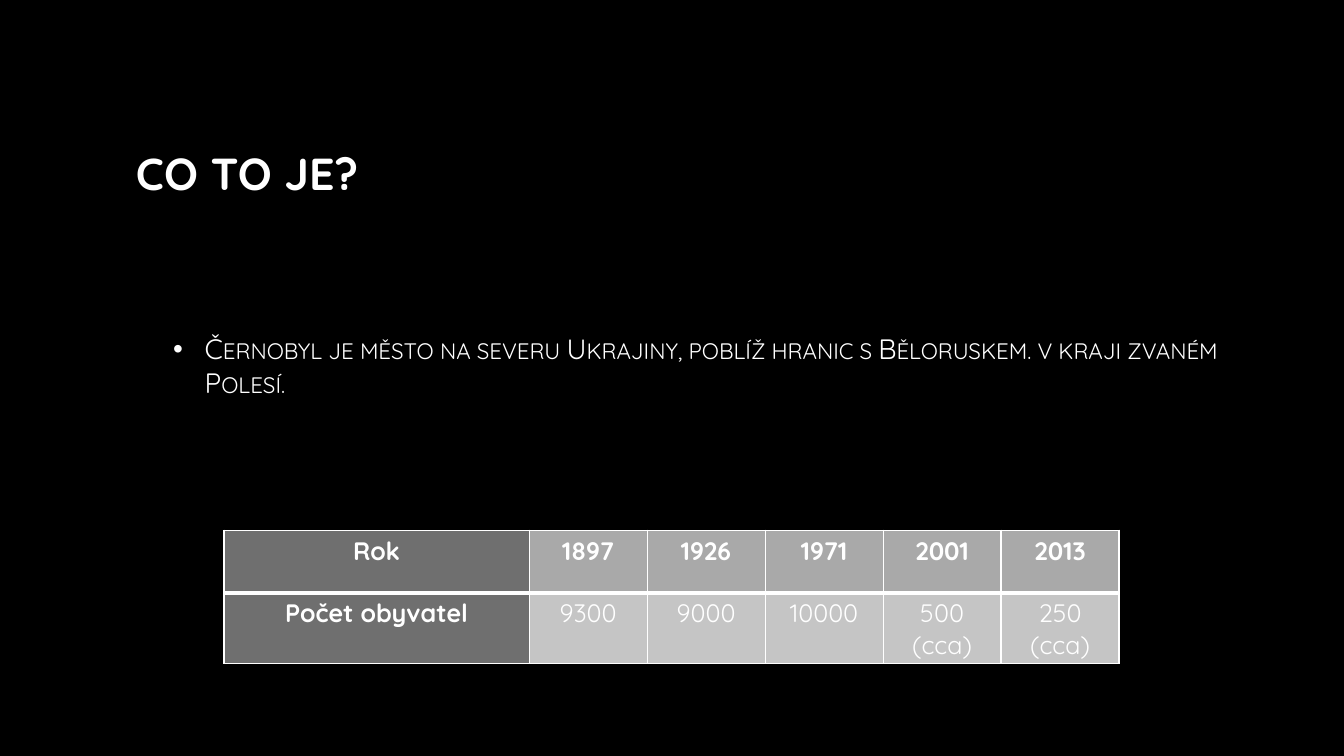
import lxml.etree
import pptx
import pptx.dml.color
import pptx.enum.text
import pptx.oxml
import pptx.oxml.ns
import pptx.util

Pt = pptx.util.Pt
RGBColor = pptx.dml.color.RGBColor
Align = pptx.enum.text.PP_ALIGN
Anchor = pptx.enum.text.MSO_ANCHOR
qn = pptx.oxml.ns.qn

BLACK = RGBColor(0x00, 0x00, 0x00)
WHITE = RGBColor(0xFF, 0xFF, 0xFF)
LABEL_GRAY = RGBColor(0x6F, 0x6F, 0x6F)
YEAR_GRAY = RGBColor(0xA9, 0xA9, 0xA9)
VALUE_GRAY = RGBColor(0xC5, 0xC5, 0xC5)


def write_text(frame, text, size=18, bold=False, small_caps=False, align=Align.LEFT,
               font="Quicksand", color=WHITE):
    """Fill the first paragraph of a text frame and return it."""
    para = frame.paragraphs[0]
    para.alignment = align
    span = para.add_run()
    span.text = text
    span.font.name = font
    span.font.size = Pt(size)
    span.font.bold = bold
    span.font.color.rgb = color
    if small_caps:
        span.font._element.set("cap", "small")
    return para


class PageBuilder:
    def __init__(self, deck, background):
        self.page = deck.slides.add_slide(deck.slide_layouts[6])
        self.page.background.fill.solid()
        self.page.background.fill.fore_color.rgb = background

    def text_box(self, left, top, width, height, text, **style):
        box = self.page.shapes.add_textbox(Pt(left), Pt(top), Pt(width), Pt(height))
        box.text_frame.word_wrap = True
        box.text_frame.vertical_anchor = Anchor.MIDDLE
        return write_text(box.text_frame, text, **style)

    def bullet_box(self, left, top, width, height, text, indent, **style):
        para = self.text_box(left, top, width, height, text, **style)
        para.space_before = Pt(4)
        para.space_after = Pt(6)
        properties = para._p.get_or_add_pPr()
        properties.set("marL", str(Pt(indent)))
        properties.set("indent", str(-Pt(indent)))
        color = lxml.etree.SubElement(properties, qn("a:buClr"))
        lxml.etree.SubElement(color, qn("a:srgbClr"), val=str(WHITE))
        lxml.etree.SubElement(properties, qn("a:buFont"), typeface="Arial")
        lxml.etree.SubElement(properties, qn("a:buChar"), char="•")

    def cell(self, cell, text, fill, bold, top_line, bottom_line):
        cell.fill.solid()
        cell.fill.fore_color.rgb = fill
        write_text(cell.text_frame, text, bold=bold, align=Align.CENTER)
        # Borders come before the fill in the cell properties
        borders = {"L": 1, "R": 1, "T": top_line, "B": bottom_line}
        properties = cell._tc.get_or_add_tcPr()
        for index, (side, width) in enumerate(borders.items()):
            line = lxml.etree.Element(qn("a:ln" + side), w=str(Pt(width)))
            solid = lxml.etree.SubElement(line, qn("a:solidFill"))
            lxml.etree.SubElement(solid, qn("a:srgbClr"), val=str(WHITE))
            properties.insert(index, line)

    def table(self, left, top, widths, heights, rows):
        frame = self.page.shapes.add_table(len(rows), len(widths), Pt(left), Pt(top),
                                           Pt(sum(widths)), Pt(sum(heights)))
        table = frame.table
        for column, width in zip(table.columns, widths):
            column.width = Pt(width)
        for row, height in zip(table.rows, heights):
            row.height = Pt(height)
        for row_index, texts in enumerate(rows):
            header = row_index == 0
            for column_index, text in enumerate(texts):
                label = column_index == 0
                fill = LABEL_GRAY if label else YEAR_GRAY if header else VALUE_GRAY
                self.cell(table.cell(row_index, column_index), text, fill,
                          bold=header or label,
                          top_line=1 if header else 3,
                          bottom_line=3 if header else 1)


def main():
    deck = pptx.Presentation()
    deck.slide_width = Pt(960)
    deck.slide_height = Pt(540)
    builder = PageBuilder(deck, BLACK)

    # Title and description
    builder.text_box(90, 48, 780, 150, "CO TO JE?", size=32, bold=True)
    builder.bullet_box(
        116.6, 138, 789, 246,
        "Černobyl je město na severu Ukrajiny, poblíž hranic s Běloruskem. "
        "v kraji zvaném Polesí.",
        indent=22.5, size=20, small_caps=True)

    # Population by year
    builder.table(160, 378.8, [218] + [84.3] * 5, [44.6, 42.5], [
        ["Rok", "1897", "1926", "1971", "2001", "2013"],
        ["Počet obyvatel", "9300", "9000", "10000", "500 (cca)", "250 (cca)"],
    ])

    deck.save("out.pptx")


if __name__ == "__main__":
    main()
